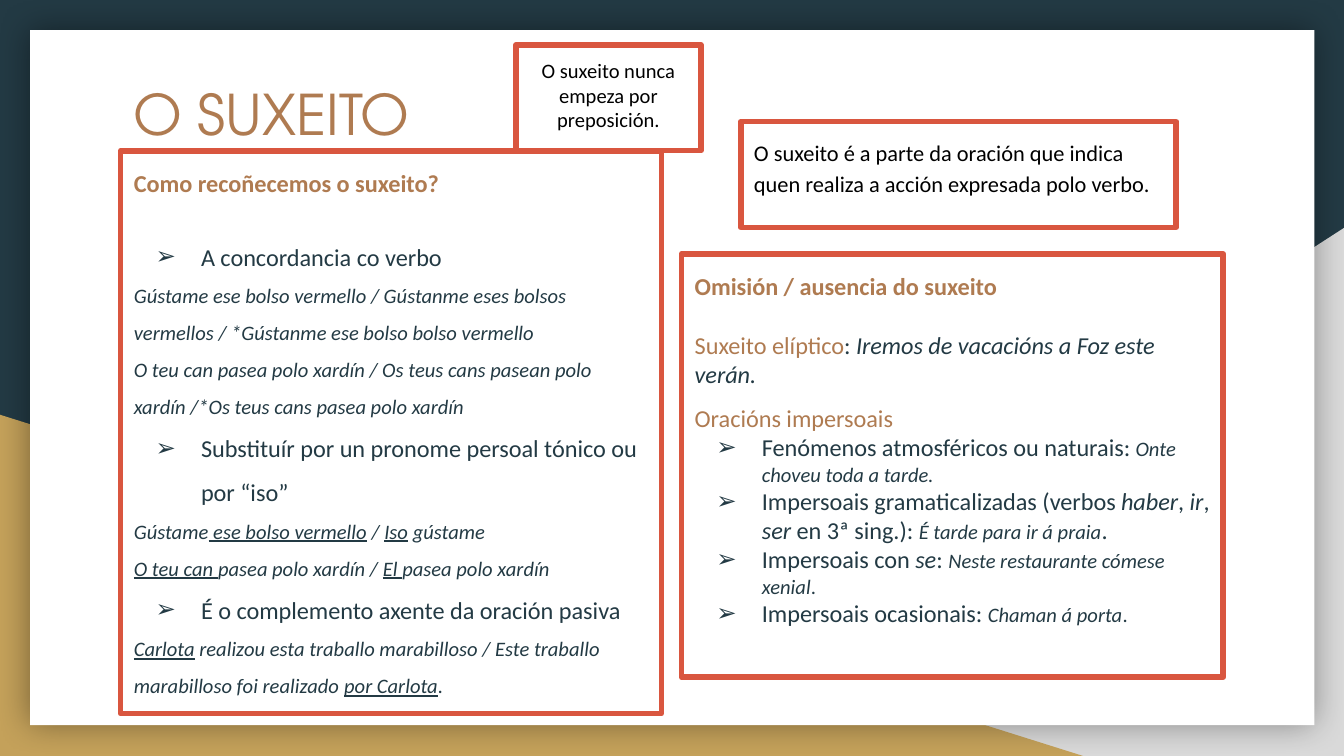
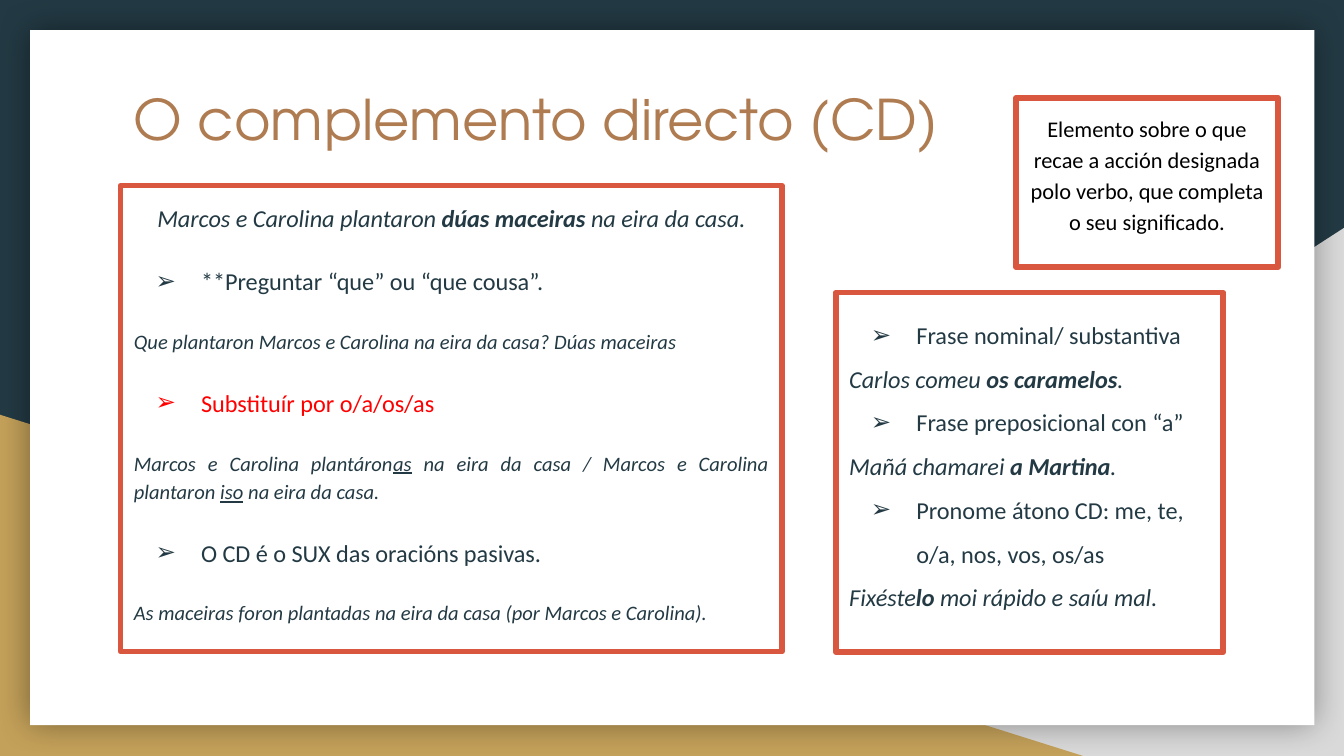
import pptx
import pptx.util
import pptx.dml.color
import pptx.enum.shapes
import pptx.enum.text
import pptx.oxml.ns
from lxml import etree

Cm, Pt = pptx.util.Cm, pptx.util.Pt
qn = pptx.oxml.ns.qn
SHAPE = pptx.enum.shapes.MSO_SHAPE
ALIGN = pptx.enum.text.PP_ALIGN
INK, TAN, GOLD, GREY = "233A44", "AF7B51", "C4A15A", "D9D9D9"
EDGE, RED, BLACK, WHITE = "D9563F", "FF0000", "000000", "FFFFFF"
HEAD, BODY = "TeX Gyre Adventor", "Calibri"
LEFT = 2.28  # shared left edge of titles and main boxes


def rgb(text):
    return pptx.dml.color.RGBColor.from_string(text)


def shape(slide, kind, x, y, w, h):
    form = slide.shapes.add_shape(kind, Cm(x), Cm(y), Cm(w), Cm(h))
    form.shadow.inherit = False
    return form


def plain(slide, kind, area, color):
    form = shape(slide, kind, *area)
    form.fill.solid()
    form.fill.fore_color.rgb = rgb(color)
    form.line.fill.background()
    return form


def glow(form):
    """Add a soft, centred black shadow."""
    effects = form.element.spPr.find(qn("a:effectLst"))
    shade = etree.SubElement(effects, qn("a:outerShdw"), blurRad=str(Pt(18)),
                             dist="0", dir="0", algn="ctr", rotWithShape="0")
    tint = etree.SubElement(shade, qn("a:srgbClr"), val=BLACK)
    etree.SubElement(tint, qn("a:alpha"), val="40000")


def scene(layout, slide):
    """Draw the backdrop on the slide, then move it to the layout."""
    layout.background.fill.solid()
    layout.background.fill.fore_color.rgb = rgb(INK)
    grey = plain(slide, SHAPE.RIGHT_TRIANGLE, (9.96, 4.31, 15.44, 9.98), GREY)
    grey.element.spPr.xfrm.set("flipH", "1")
    gold = plain(slide, SHAPE.RIGHT_TRIANGLE, (0, 7.84, 20.47, 6.45), GOLD)
    sheet = plain(slide, SHAPE.RECTANGLE, (0.57, 0.57, 24.27, 13.14), WHITE)
    glow(sheet)
    for n, form in enumerate((grey, gold, sheet)):
        form.element.nvSpPr.cNvPr.set("id", str(101 + n))
        layout.shapes.element.insert(2 + n, form.element)


def setup(frame):
    frame.word_wrap = True
    frame.auto_size = pptx.enum.text.MSO_AUTO_SIZE.NONE
    frame.vertical_anchor = pptx.enum.text.MSO_ANCHOR.TOP
    frame.margin_left = frame.margin_right = Cm(0.25)
    frame.margin_top = frame.margin_bottom = Cm(0.25)


def style(run, face, size, color):
    run.font.name, run.font.size = face, Pt(size)
    run.font.color.rgb = rgb(color)


def title(slide, text, y, h):
    head = slide.shapes.title
    head.left, head.top, head.width, head.height = (
        Cm(LEFT), Cm(y), Cm(20.85), Cm(h))
    setup(head.text_frame)
    head.text_frame.text = text
    para = head.text_frame.paragraphs[0]
    para.alignment = ALIGN.LEFT
    style(para.runs[0], HEAD, 30, TAN)


def line(*runs, **look):
    """Describe a paragraph; each run is "marks|text".

    Marks: b bold, i italic, u underline, s small, m medium,
    t tan, r red, k black.
    """
    return runs, look


def item(*runs, **look):
    return line(*runs, bullet=True, **look)


def write(para, text):
    marks, _, words = text.partition("|")
    run = para.add_run()
    run.text = words
    size = 11 if "s" in marks else 12 if "m" in marks else 13
    tints = [c for m, c in (("t", TAN), ("r", RED), ("k", BLACK)) if m in marks]
    style(run, BODY, size, tints[0] if tints else INK)
    run.font.bold = "b" in marks
    run.font.italic = "i" in marks
    run.font.underline = "u" in marks


def arrow(para, color):
    props = para._p.get_or_add_pPr()
    props.set("marL", str(Cm(1.27)))
    props.set("indent", str(Cm(-0.86)))
    tint = etree.SubElement(props, qn("a:buClr"))
    etree.SubElement(tint, qn("a:srgbClr"), val=color)
    etree.SubElement(props, qn("a:buFont"), typeface=BODY)
    etree.SubElement(props, qn("a:buChar"), char="➢")


def box(slide, area, lines, align=ALIGN.LEFT, gap=1.0, before=0):
    """Draw a framed box; its defaults apply to lines that set no own look."""
    form = shape(slide, SHAPE.RECTANGLE, *area)
    form.fill.background()
    form.line.color.rgb = rgb(EDGE)
    form.line.width = Pt(3)
    frame = form.text_frame
    setup(frame)
    for n, (runs, look) in enumerate(lines):
        para = frame.add_paragraph() if n else frame.paragraphs[0]
        para.alignment = look.get("align", align)
        para.line_spacing = look.get("gap", gap)
        para.space_before = Pt(look.get("before", before))
        para.space_after = Pt(look.get("after", 0))
        if "bullet" in look:
            arrow(para, RED if runs[0].startswith("r") else INK)
        for text in runs:
            write(para, text)


def subject(slide):
    title(slide, "O SUXEITO", 1.25, 1.6)
    box(slide, (LEFT, 2.85, 10.22, 10.64), [
        line("bt|Como recoñecemos o suxeito?", gap=1.15),
        item("|A concordancia co verbo", before=16),
        line("is|Gústame ese bolso vermello / Gústanme eses bolsos vermellos"
             " / *Gústanme ese bolso bolso vermello"),
        line("is|O teu can pasea polo xardín / Os teus cans pasean polo xardín"
             " /*Os teus cans pasea polo xardín"),
        item("|Substituír por un pronome persoal tónico ou por “iso”"),
        line("is|Gústame", "isu| ese bolso vermello", "is| / ", "isu|Iso",
             "is| gústame"),
        line("isu|O teu can ", "is|pasea polo xardín / ", "isu|El ",
             "is|pasea polo xardín"),
        item("|É o complemento axente da oración pasiva"),
        line("isu|Carlota", "is| realizou esta traballo marabilloso / Este"
             " traballo marabilloso foi realizado ", "isu|por Carlota", "is|."),
    ], gap=1.5)
    box(slide, (12.88, 4.8, 10.24, 8), [
        line("bt|Omisión / ausencia do suxeito", gap=1.15),
        line("t|Suxeito elíptico", "|: ",
             "i|Iremos de vacacións a Foz este verán.", before=16),
        line("t|Oracións impersoais", gap=1.5),
        item("|Fenómenos atmosféricos ou naturais: ",
             "is|Onte choveu toda a tarde."),
        item("|Impersoais gramaticalizadas (verbos ", "i|haber", "|, ", "i|ir",
             "|, ", "i|ser", "| en 3ª sing.): ", "is|É tarde para ir á praia",
             "|."),
        item("|Impersoais con ", "i|se", "|: ",
             "is|Neste restaurante cómese xenial", "s|."),
        item("|Impersoais ocasionais: ", "is|Chaman á porta", "s|."),
    ])
    box(slide, (14, 2.3, 8.23, 2), [
        line("mk|O suxeito é a parte da oración que indica quen realiza a"
             " acción expresada polo verbo."),
    ], gap=1.15)
    box(slide, (9.75, 0.85, 3.5, 2), [
        line("sk|O suxeito nunca empeza por preposición."),
    ], align=ALIGN.CENTER)


def direct(slide):
    title(slide, "O complemento directo (CD)", 1.35, 1.73)
    box(slide, (LEFT, 3.51, 12.5, 8.81), [
        line("i|Marcos e Carolina plantaron ", "bi|dúas maceiras",
             "i| na eira da casa.", align=ALIGN.CENTER, before=0),
        item("|**Preguntar “que” ou “que cousa”."),
        line("is|Que plantaron Marcos e Carolina na eira da casa?"
             " Dúas maceiras"),
        item("r|Substituír por o/a/os/as"),
        line("is|Marcos e Carolina plantáron", "isu|as",
             "is| na eira da casa / Marcos e Carolina plantaron ", "isu|iso",
             "is| na eira da casa."),
        item("|O CD é o SUX das oracións pasivas."),
        line("is|As maceiras foron plantadas na eira da casa"
             " (por Marcos e Carolina).", after=16),
    ], align=ALIGN.JUSTIFY, gap=1.15, before=16)
    box(slide, (19.2, 1.85, 4.96, 3.2), [
        line("mk|Elemento sobre o que recae a acción designada polo verbo,"
             " que completa o seu significado."),
    ], align=ALIGN.CENTER, gap=1.15)
    box(slide, (15.8, 5.53, 7.32, 6.8), [
        item("|Frase nominal/ substantiva"),
        line("i|Carlos comeu ", "bi|os caramelos", "i|."),
        item("|Frase preposicional con “a”"),
        line("i|Mañá chamarei", "bi| a Martina", "i|."),
        item("|Pronome átono CD: me, te, o/a, nos, vos, os/as"),
        line("i|Fixéste", "bi|lo", "i| moi rápido e saíu mal."),
    ], gap=1.5)


def main():
    deck = pptx.Presentation()
    deck.slide_width, deck.slide_height = Cm(25.4), Cm(14.29)
    layout = deck.slide_layouts.get_by_name("Title Only")
    first, second = (deck.slides.add_slide(layout) for _ in range(2))
    scene(layout, first)
    subject(first)
    direct(second)
    deck.save("out.pptx")


if __name__ == "__main__":
    main()
